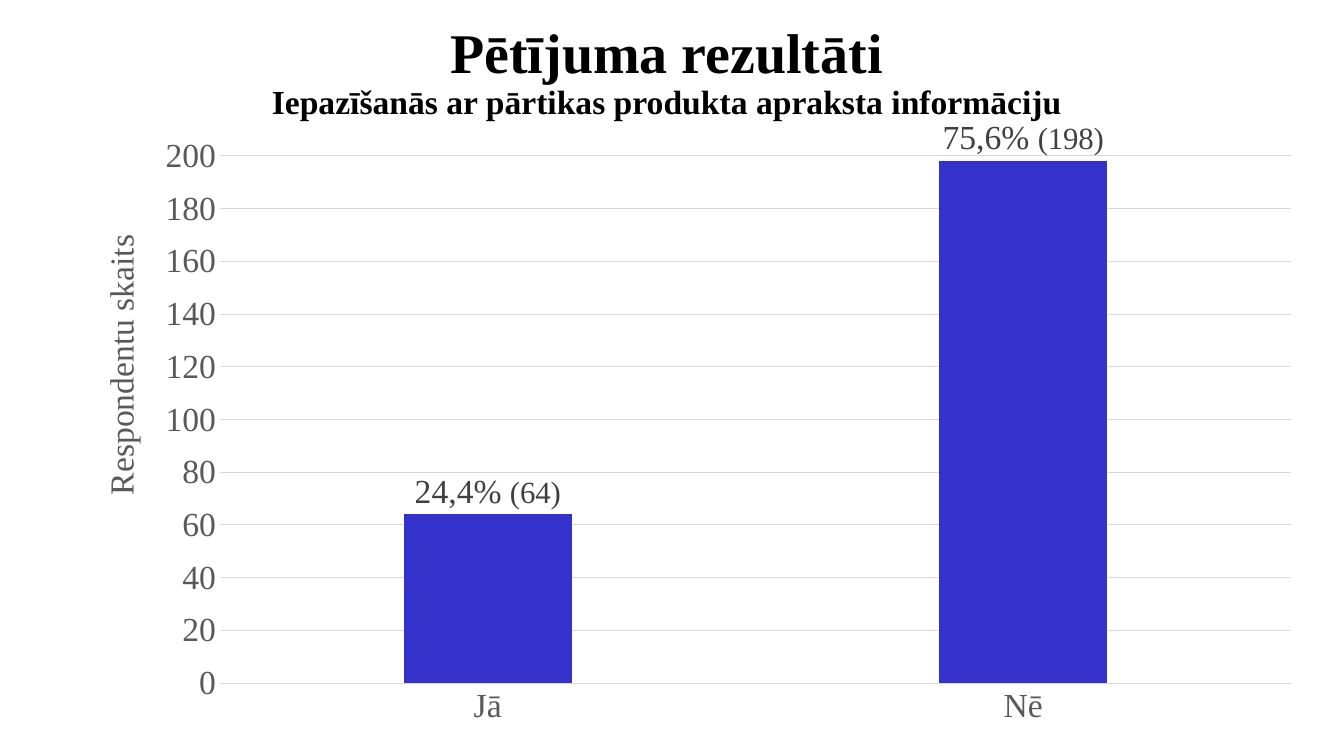
from dataclasses import dataclass

from lxml import etree
from pptx import Presentation
from pptx import util as u
from pptx.chart import data
from pptx.dml import color
from pptx.enum import chart as ce, text
from pptx.oxml import ns


@dataclass(frozen=True)
class Theme:
    face: str = "Times New Roman"
    ink: str = "000000"
    axis: str = "595959"
    label: str = "404040"
    grid: str = "D9D9D9"
    bar: str = "3333CC"
    head: float = 40
    body: float = 24
    count: float = 22
    line: float = 0.75


@dataclass(frozen=True)
class Bar:
    name: str
    value: int
    share: str


@dataclass(frozen=True)
class Area:
    """Left, top, width and height as shares of the slide."""
    left: float
    top: float
    width: float
    height: float


THEME = Theme()
WIDE, HIGH = u.Inches(13.33), u.Inches(7.5)
HEAD = Area(0.051, 0.02, 0.89, 0.187)
PLOT = Area(0.051, 0.1533, 0.916, 0.8293)
BARS = [Bar("Jā", 64, "24,4%"), Bar("Nē", 198, "75,6%")]


def place(area: Area) -> tuple[int, int, int, int]:
    return (int(area.left * WIDE), int(area.top * HIGH),
            int(area.width * WIDE), int(area.height * HIGH))


def style(font, size: float, shade: str, bold: bool = False) -> None:
    font.name, font.size, font.bold = THEME.face, u.Pt(size), bold
    font.color.rgb = color.RGBColor.from_string(shade)


def write(para, words: str, size: float, shade: str, bold: bool = False) -> None:
    run = para.add_run()
    run.text = words
    style(run.font, size, shade, bold)


def rule(line) -> None:
    line.color.rgb = color.RGBColor.from_string(THEME.grid)
    line.width = u.Pt(THEME.line)


def lay_out(host, index: int, **parts: str | float) -> None:
    """Fix the position of a chart part, as shares of the chart."""
    old = host.find(ns.qn("c:layout"))
    if old is not None:
        host.remove(old)
    layout = etree.Element(ns.qn("c:layout"))
    manual = etree.SubElement(layout, ns.qn("c:manualLayout"))
    for key, value in parts.items():
        etree.SubElement(manual, ns.qn(f"c:{key}")).set("val", str(value))
    host.insert(index, layout)


def add_head(slide) -> None:
    frame = slide.shapes.add_textbox(*place(HEAD)).text_frame
    frame.word_wrap = True
    frame.vertical_anchor = text.MSO_ANCHOR.TOP
    frame.margin_top = u.Inches(0.1)
    para = frame.paragraphs[0]
    para.alignment = text.PP_ALIGN.CENTER
    para.line_spacing = 0.9
    write(para, "Pētījuma rezultāti", THEME.head, THEME.ink, True)
    para.add_line_break()
    write(para, "Iepazīšanās ar pārtikas produkta apraksta informāciju",
          THEME.body, THEME.ink, True)


def add_axes(chart) -> None:
    cat, val = chart.category_axis, chart.value_axis
    for axis in (cat, val):
        axis.major_tick_mark = axis.minor_tick_mark = ce.XL_TICK_MARK.NONE
        style(axis.tick_labels.font, THEME.body, THEME.axis)
    rule(cat.format.line)
    val.format.line.fill.background()
    val.minimum_scale, val.maximum_scale, val.major_unit = 0, 200, 20
    val.has_major_gridlines = True
    rule(val.major_gridlines.format.line)
    title = val.axis_title
    frame = title.text_frame
    frame.paragraphs[0].font.bold = False
    write(frame.paragraphs[0], "Respondentu skaits", THEME.body, THEME.axis)
    body = title._element.find(f".//{ns.qn('a:bodyPr')}")
    body.set("rot", "-5400000")
    body.set("vert", "horz")
    lay_out(title._element, 1, xMode="edge", yMode="edge", x=0.02, y=0.18)


def add_bars(chart) -> None:
    plot = chart.plots[0]
    plot.gap_width, plot.overlap, plot.vary_by_categories = 219, -27, False
    series = plot.series[0]
    series.format.fill.solid()
    series.format.fill.fore_color.rgb = color.RGBColor.from_string(THEME.bar)
    labels = series.data_labels
    labels.show_value = True
    labels.position = ce.XL_LABEL_POSITION.OUTSIDE_END
    style(labels.font, THEME.body, THEME.label)
    for index, bar in enumerate(BARS):
        label = series.points[index].data_label
        para = label.text_frame.paragraphs[0]
        write(para, f"{bar.share} ", THEME.body, THEME.label)
        write(para, f"({bar.value})", THEME.count, THEME.label)
        label.position = ce.XL_LABEL_POSITION.OUTSIDE_END


def add_chart(slide) -> None:
    table = data.CategoryChartData()
    table.categories = [bar.name for bar in BARS]
    table.add_series("Series 1", [bar.value for bar in BARS])
    chart = slide.shapes.add_chart(
        ce.XL_CHART_TYPE.COLUMN_CLUSTERED, *place(PLOT), table).chart
    chart.has_title = chart.has_legend = False
    style(chart.font, THEME.body, THEME.ink)
    add_axes(chart)
    add_bars(chart)
    area = chart._chartSpace.find(f".//{ns.qn('c:plotArea')}")
    lay_out(area, 0, layoutTarget="inner", xMode="edge", yMode="edge",
            x=0.123, y=0.064, w=0.87, h=0.841)


def main() -> None:
    deck = Presentation()
    deck.slide_width, deck.slide_height = WIDE, HIGH
    slide = deck.slides.add_slide(deck.slide_layouts[6])
    # Heading
    add_head(slide)
    # Column chart
    add_chart(slide)
    deck.save("out.pptx")


if __name__ == "__main__":
    main()
